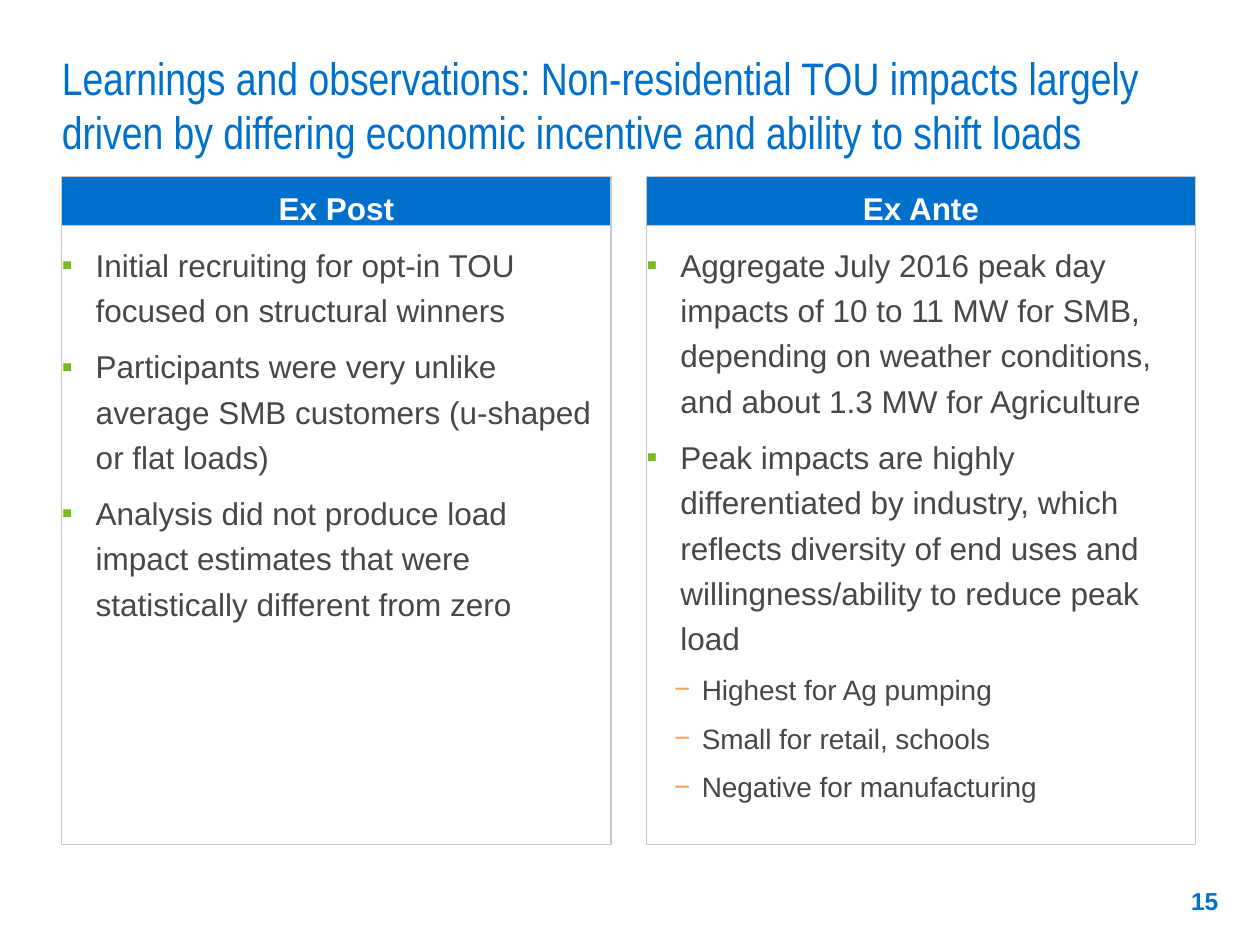
"""Build the slide comparing ex post and ex ante learnings on TOU impacts."""
from dataclasses import dataclass

import pptx
import pptx.dml.color
import pptx.enum.shapes
import pptx.enum.text
import pptx.oxml.ns
import pptx.util
from lxml import etree

RGBColor = pptx.dml.color.RGBColor
Align = pptx.enum.text.PP_ALIGN
Anchor = pptx.enum.text.MSO_ANCHOR

BLUE = RGBColor(0x00, 0x70, 0xCD)
GREEN = RGBColor(0x77, 0xBC, 0x1F)
ORANGE = RGBColor(0xFB, 0x9E, 0x4C)
GREY = RGBColor(0x46, 0x47, 0x49)
BORDER = RGBColor(0xC7, 0xC9, 0xCB)
WHITE = RGBColor(0xFF, 0xFF, 0xFF)

WIDTH, HEIGHT = 10, 7.5
MARGIN, COLUMN_WIDTH, COLUMN_PITCH = 0.49, 4.36, 4.64
HEADER_TOP, HEADER_HEIGHT, BODY_HEIGHT = 1.4, 0.39, 4.91


@dataclass(frozen=True)
class Style:
    """Character and paragraph format of one kind of text."""

    size: float
    color: RGBColor
    font: str = "Arial"
    bold: bool = False
    align: Align = Align.LEFT
    line: float = 1.0
    before: float = 0
    after: float = 0
    bullet: str = ""
    bullet_color: RGBColor = GREEN
    indent: float = 0
    hang: float = 0


@dataclass(frozen=True)
class Frame:
    """Position, insets and anchor of a text area, in inches."""

    left: float
    top: float
    width: float
    height: float
    insets: tuple[float, float, float, float]
    anchor: Anchor = Anchor.TOP

    def box(self) -> list[int]:
        """Return the position and size as lengths."""
        return [pptx.util.Inches(v) for v in (self.left, self.top, self.width, self.height)]


@dataclass(frozen=True)
class Column:
    """Heading and points of one column."""

    heading: str
    points: list[tuple[Style, str]]


TITLE = Style(26, BLUE, font="Arial Narrow")
NUMBER = Style(14, BLUE, bold=True, align=Align.RIGHT)
HEADING = Style(18, WHITE, bold=True, align=Align.CENTER, line=1.2, after=2.6)
POINT = Style(18, GREY, line=1.2, before=3.6, after=2.6, bullet="▪", indent=0.27, hang=0.27)
DETAIL = Style(16, GREY, line=1.3, before=0.3, after=2.6, bullet="−",
               bullet_color=ORANGE, indent=0.44, hang=0.22)

COLUMNS = [
    Column("Ex Post", [
        (POINT, "Initial recruiting for opt-in TOU focused on structural winners"),
        (POINT, "Participants were very unlike average SMB customers (u-shaped or flat loads)"),
        (POINT, "Analysis did not produce load impact estimates that were "
                "statistically different from zero"),
    ]),
    Column("Ex Ante", [
        (POINT, "Aggregate July 2016 peak day impacts of 10 to 11 MW for SMB, "
                "depending on weather conditions, and about 1.3 MW for Agriculture"),
        (POINT, "Peak impacts are highly differentiated by industry, which reflects "
                "diversity of end uses and willingness/ability to reduce peak load"),
        (DETAIL, "Highest for Ag pumping"),
        (DETAIL, "Small for retail, schools"),
        (DETAIL, "Negative for manufacturing"),
    ]),
]


def set_all(target: object, values: dict[str, object]) -> None:
    """Set every named attribute on the target."""
    for name, value in values.items():
        setattr(target, name, value)


def add_bullet(paragraph, style: Style) -> None:
    """Give the paragraph a coloured bullet with a hanging indent."""
    qn = pptx.oxml.ns.qn
    properties = paragraph._p.get_or_add_pPr()
    properties.set("marL", str(pptx.util.Inches(style.indent)))
    properties.set("indent", str(-pptx.util.Inches(style.hang)))
    color = etree.SubElement(properties, qn("a:buClr"))
    etree.SubElement(color, qn("a:srgbClr"), val=str(style.bullet_color))
    etree.SubElement(properties, qn("a:buFont"), typeface=style.font)
    etree.SubElement(properties, qn("a:buChar"), char=style.bullet)


def write(shape, frame: Frame, lines: list[tuple[Style, str]]) -> None:
    """Write the styled lines into the shape."""
    text = shape.text_frame
    sides = ("margin_left", "margin_top", "margin_right", "margin_bottom")
    set_all(text, {"word_wrap": True, "vertical_anchor": frame.anchor}
            | {side: pptx.util.Inches(v) for side, v in zip(sides, frame.insets)})
    for index, (style, words) in enumerate(lines):
        paragraph = text.add_paragraph() if index else text.paragraphs[0]
        if style.bullet:
            add_bullet(paragraph, style)
        set_all(paragraph, {
            "alignment": style.align,
            "line_spacing": style.line,
            "space_before": pptx.util.Pt(style.before if index else 0),
            "space_after": pptx.util.Pt(style.after),
        })
        run = paragraph.add_run()
        run.text = words
        set_all(run.font, {"name": style.font, "size": pptx.util.Pt(style.size),
                           "bold": style.bold})
        run.font.color.rgb = style.color


def add_label(slide, frame: Frame, style: Style, words: str) -> None:
    """Add a plain text box holding one line."""
    write(slide.shapes.add_textbox(*frame.box()), frame, [(style, words)])


def add_panel(slide, frame: Frame, fill: RGBColor | None,
              lines: list[tuple[Style, str]]) -> None:
    """Add a bordered rectangle with text."""
    panel = slide.shapes.add_shape(pptx.enum.shapes.MSO_SHAPE.RECTANGLE, *frame.box())
    panel.shadow.inherit = False
    if fill is None:
        panel.fill.background()
    else:
        panel.fill.solid()
        panel.fill.fore_color.rgb = fill
    panel.line.color.rgb = BORDER
    panel.line.width = pptx.util.Pt(0.75)
    write(panel, frame, lines)


def main() -> None:
    """Build and save the slide."""
    deck = pptx.Presentation()
    set_all(deck, {"slide_width": pptx.util.Inches(WIDTH),
                   "slide_height": pptx.util.Inches(HEIGHT)})
    slide = deck.slides.add_slide(deck.slide_layouts[6])

    add_label(slide, Frame(MARGIN, 0.57, 9.01, 0.74, (0, 0.05, 0.1, 0.05), Anchor.BOTTOM), TITLE,
              "Learnings and observations: Non-residential TOU impacts largely "
              "driven by differing economic incentive and ability to shift loads")
    add_label(slide, Frame(9.11, 6.95, 0.65, 0.4, (0.09, 0.04, 0.09, 0.04), Anchor.MIDDLE),
              NUMBER, "15")

    for index, column in enumerate(COLUMNS):
        left = MARGIN + index * COLUMN_PITCH
        body = Frame(left, HEADER_TOP + HEADER_HEIGHT, COLUMN_WIDTH, BODY_HEIGHT,
                     (0, 0.1, 0.1, 0.05))
        header = Frame(left, HEADER_TOP, COLUMN_WIDTH, HEADER_HEIGHT,
                       (0.09, 0.09, 0.09, 0.04), Anchor.MIDDLE)
        add_panel(slide, body, None, column.points)
        add_panel(slide, header, BLUE, [(HEADING, column.heading)])

    deck.save("out.pptx")


if __name__ == "__main__":
    main()
